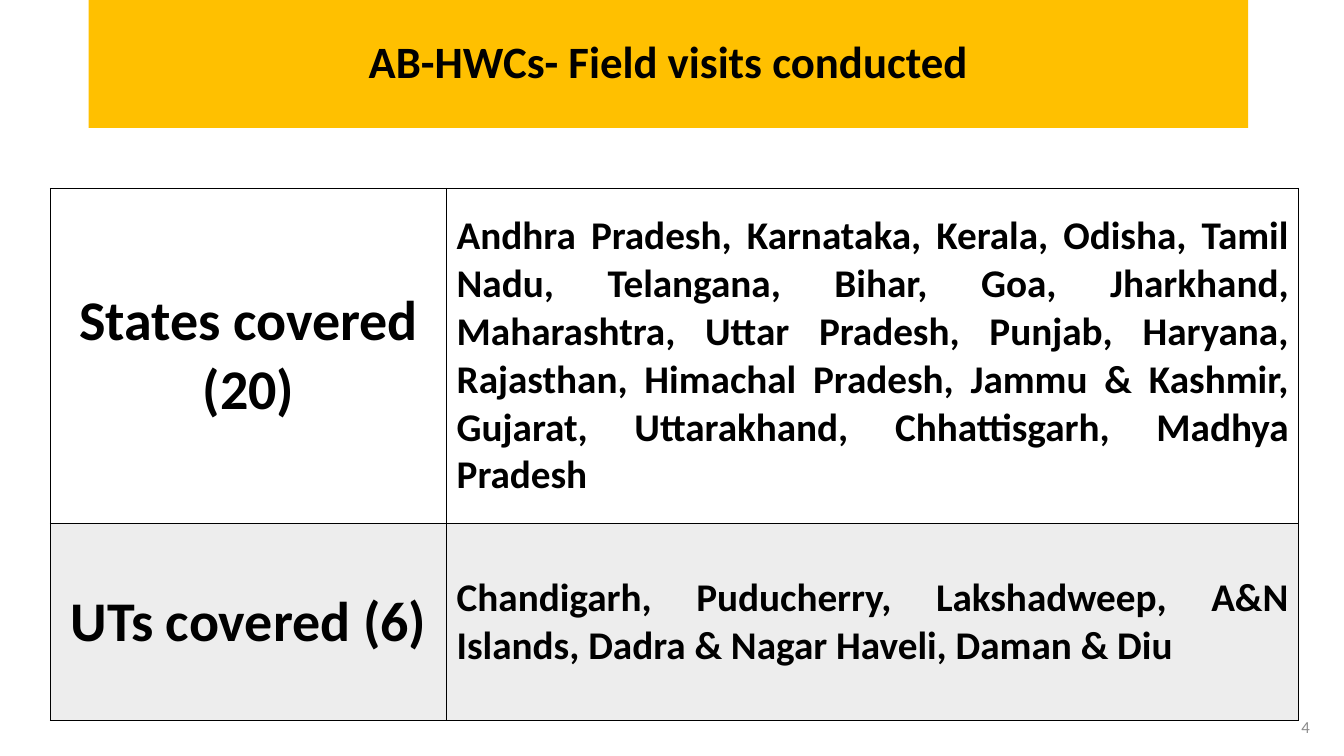
"""Build the slide listing the states and union territories visited."""
from lxml import etree
from pptx import Presentation
from pptx import util as u
from pptx.dml.color import RGBColor
from pptx.enum import text
from pptx.oxml import ns

AMBER = RGBColor(0xFF, 0xC0, 0x00)
BLACK = RGBColor(0x00, 0x00, 0x00)
WHITE = RGBColor(0xFF, 0xFF, 0xFF)
PALE = RGBColor(0xED, 0xED, 0xED)
GREY = RGBColor(0x8C, 0x8C, 0x8C)
ALIGN = text.PP_ALIGN


def write(tf, words, size, align, color=BLACK, bold=True):
    p = tf.paragraphs[0]
    p.alignment = align
    r = p.add_run()
    r.text = words
    r.font.color.rgb = color
    for name, value in {"name": "Calibri", "size": u.Pt(size), "bold": bold}.items():
        setattr(r.font, name, value)
    return p


def add_borders(cell):
    tcPr = cell._tc.get_or_add_tcPr()
    for side in ("a:lnL", "a:lnR", "a:lnT", "a:lnB"):
        ln = etree.SubElement(tcPr, ns.qn(side), w=str(u.Pt(1)))
        fill = etree.SubElement(ln, ns.qn("a:solidFill"))
        etree.SubElement(fill, ns.qn("a:srgbClr"), val=str(BLACK))


prs = Presentation()
prs.slide_width, prs.slide_height = u.Inches(13.33), u.Inches(7.5)
s = prs.slides.add_slide(prs.slide_layouts[5])

title = s.shapes.title
box = {"left": 0.88, "top": 0, "width": 11.5, "height": 1.27}
for name, value in box.items():
    setattr(title, name, u.Inches(value))
title.fill.solid()
title.fill.fore_color.rgb = AMBER
title.text_frame.vertical_anchor = text.MSO_ANCHOR.MIDDLE
p = write(title.text_frame, "AB-HWCs- Field visits conducted", 32, ALIGN.CENTER)
p.line_spacing = 0.9

rows = [
    (3.32, WHITE, "States covered (20)",
     "Andhra Pradesh, Karnataka, Kerala, Odisha, Tamil Nadu, Telangana, Bihar, "
     "Goa, Jharkhand, Maharashtra, Uttar Pradesh, Punjab, Haryana, Rajasthan, "
     "Himachal Pradesh, Jammu & Kashmir, Gujarat, Uttarakhand, Chhattisgarh, "
     "Madhya Pradesh"),
    (1.96, PALE, "UTs covered (6)",
     "Chandigarh, Puducherry, Lakshadweep, A&N Islands, "
     "Dadra & Nagar Haveli, Daman & Diu"),
]
columns = [(3.93, 40, ALIGN.CENTER), (8.45, 28, ALIGN.JUSTIFY)]
table = s.shapes.add_table(len(rows), len(columns), u.Inches(0.5), u.Inches(1.87),
                           u.Inches(12.38), u.Inches(5.28)).table
table.first_row = table.horz_banding = False
for j, (width, size, align) in enumerate(columns):
    table.columns[j].width = u.Inches(width)
    for i, (height, fill, *words) in enumerate(rows):
        table.rows[i].height = u.Inches(height)
        cell = table.cell(i, j)
        add_borders(cell)
        cell.fill.solid()
        cell.fill.fore_color.rgb = fill
        cell.vertical_anchor = text.MSO_ANCHOR.MIDDLE
        write(cell.text_frame, words[j], size, align)

number = s.shapes.add_textbox(u.Inches(10.09), u.Inches(7.01), u.Inches(3), u.Inches(0.4))
number.text_frame.word_wrap = True
number.text_frame.vertical_anchor = text.MSO_ANCHOR.MIDDLE
write(number.text_frame, "4", 12, ALIGN.RIGHT, GREY, False)

prs.save("out.pptx")
